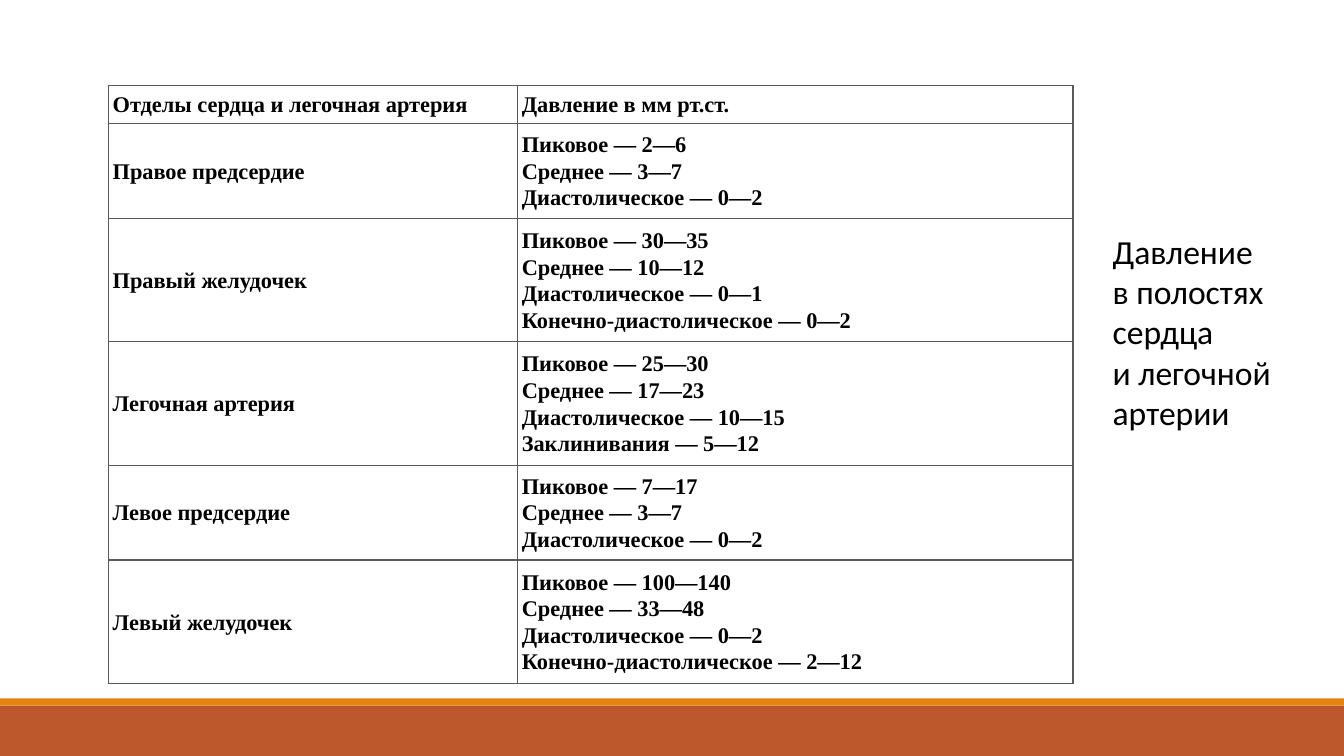
from dataclasses import dataclass

from lxml.etree import SubElement
from pptx import Presentation
from pptx.dml.color import RGBColor
from pptx.enum.shapes import MSO_SHAPE as Shape
from pptx.enum.text import MSO_ANCHOR as Anchor, MSO_AUTO_SIZE as AutoSize
from pptx.oxml.ns import qn
from pptx.util import Cm, Pt


@dataclass(frozen=True)
class Theme:
    text: str = "000000"
    border: str = "595959"
    band: str = "BD582C"
    stripe: str = "E48312"
    table_font: str = "Times New Roman"
    caption_font: str = "Calibri"
    table_size: int = 16
    caption_size: int = 24
    border_width: int = 1


@dataclass(frozen=True)
class Box:
    left: float
    top: float
    width: float
    height: float

    def lengths(self):
        return [Cm(side) for side in (self.left, self.top, self.width, self.height)]


THEME = Theme()
PAGE = Box(0, 0, 33.87, 19.05)
HEADER = ("Отделы сердца и легочная артерия", ["Давление в мм рт.ст."])
PRESSURES = [
    ("Правое предсердие", ["Пиковое — 2—6", "Среднее — 3—7", "Диастолическое — 0—2"]),
    ("Правый желудочек", ["Пиковое — 30—35", "Среднее — 10—12",
                          "Диастолическое — 0—1", "Конечно-диастолическое — 0—2"]),
    ("Легочная артерия", ["Пиковое — 25—30", "Среднее — 17—23",
                          "Диастолическое — 10—15", "Заклинивания — 5—12"]),
    ("Левое предсердие", ["Пиковое — 7—17", "Среднее — 3—7", "Диастолическое — 0—2"]),
    ("Левый желудочек", ["Пиковое — 100—140", "Среднее — 33—48",
                         "Диастолическое — 0—2", "Конечно-диастолическое — 2—12"]),
]
CAPTION = ["Давление", "в полостях", "сердца", "и легочной", "артерии"]


def style_font(font, name, size, bold=False):
    font.name = name
    font.size = Pt(size)
    font.bold = bold
    font.color.rgb = RGBColor.from_string(THEME.text)


def add_borders(cell):
    properties = cell._tc.get_or_add_tcPr()
    for position, side in enumerate(("lnL", "lnR", "lnT", "lnB")):
        line = SubElement(properties, qn(f"a:{side}"), w=str(Pt(THEME.border_width)))
        fill = SubElement(line, qn("a:solidFill"))
        SubElement(fill, qn("a:srgbClr"), val=THEME.border)
        properties.insert(position, line)


def fill_cell(cell, text):
    cell.fill.background()
    cell.vertical_anchor = Anchor.MIDDLE
    cell.margin_left = cell.margin_right = Cm(0.1)
    cell.margin_top = cell.margin_bottom = Cm(0.1)
    para = cell.text_frame.paragraphs[0]
    para.text = text
    para.line_spacing = 1.07
    style_font(para.font, THEME.table_font, THEME.table_size, bold=True)
    add_borders(cell)


def add_footer(page, box):
    stripe_height = 0.18
    stripe = Box(box.left, box.top, box.width, stripe_height)
    band = Box(box.left, box.top + stripe_height, box.width, box.height - stripe_height)
    for part, color in ((band, THEME.band), (stripe, THEME.stripe)):
        bar = page.shapes.add_shape(Shape.RECTANGLE, *part.lengths())
        bar.shadow.inherit = False
        bar.fill.solid()
        bar.fill.fore_color.rgb = RGBColor.from_string(color)
        bar.line.fill.background()


def add_pressure_table(page, box):
    records = [HEADER, *PRESSURES]
    table = page.shapes.add_table(len(records), 2, *box.lengths()).table
    table.first_row = table.horz_banding = False
    name_width = 10.31
    table.columns[0].width = Cm(name_width)
    table.columns[1].width = Cm(box.width - name_width)
    line_height = 0.72
    line_count = sum(len(values) for _, values in records)
    padding = (box.height - line_height * line_count) / len(records)
    for index, (name, values) in enumerate(records):
        table.rows[index].height = Cm(line_height * len(values) + padding)
        fill_cell(table.cell(index, 0), name)
        fill_cell(table.cell(index, 1), "\v".join(values))


def add_caption(page, box):
    frame = page.shapes.add_textbox(*box.lengths()).text_frame
    frame.word_wrap = False
    frame.auto_size = AutoSize.SHAPE_TO_FIT_TEXT
    frame.text = "\n".join(CAPTION)
    for para in frame.paragraphs:
        style_font(para.font, THEME.caption_font, THEME.caption_size)


def main():
    deck = Presentation()
    deck.slide_width, deck.slide_height = Cm(PAGE.width), Cm(PAGE.height)
    page = deck.slides.add_slide(deck.slide_layouts[6])
    footer_top = 17.6
    add_footer(page, Box(0, footer_top, PAGE.width, PAGE.height - footer_top))
    add_pressure_table(page, Box(2.74, 2.16, 24.3, 15.06))
    add_caption(page, Box(27.79, 5.69, 4.72, 5.38))
    deck.save("out.pptx")


if __name__ == "__main__":
    main()
